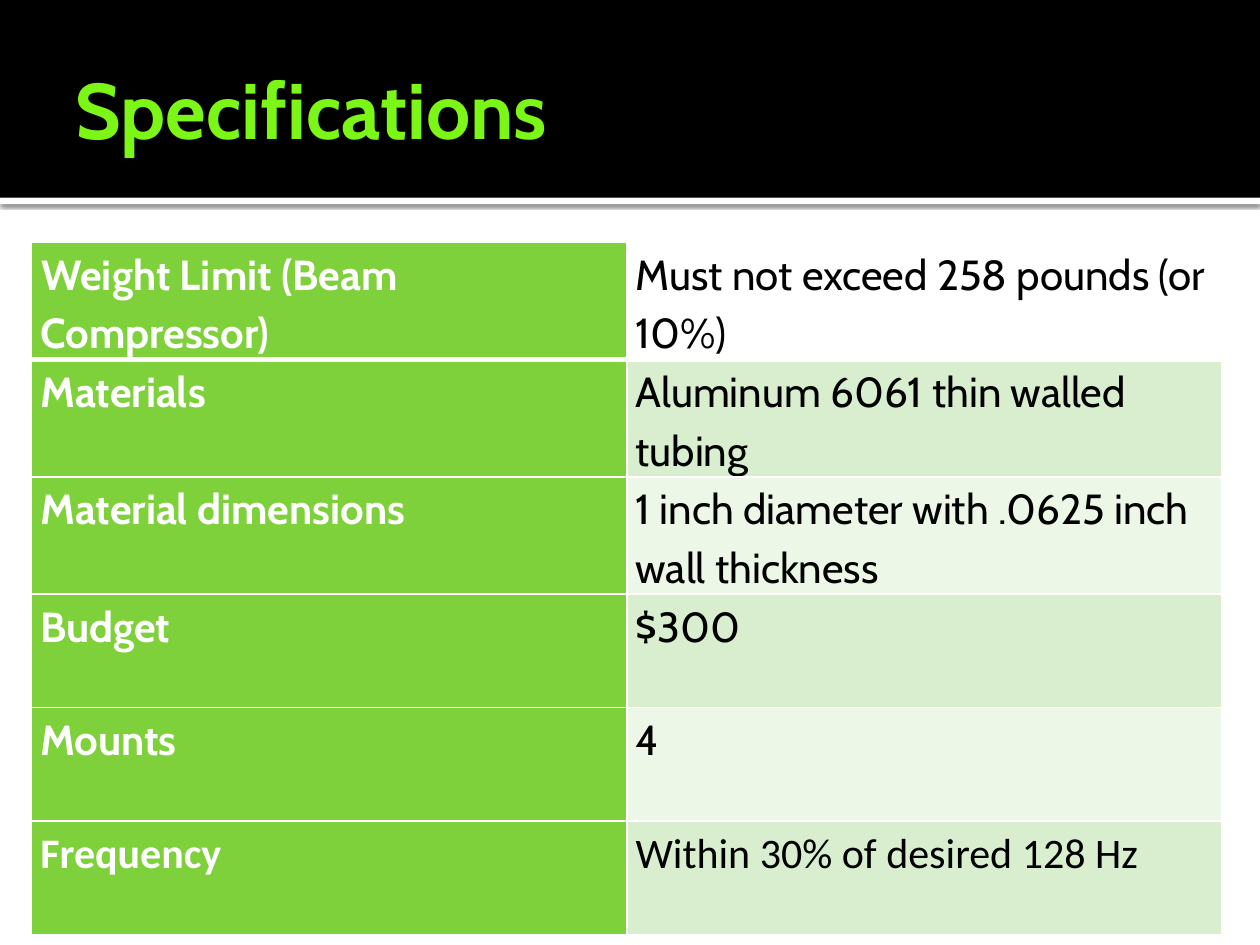
from lxml import etree
from pptx import Presentation
from pptx import util as u
from pptx.dml.color import RGBColor
from pptx.enum import shapes, text
from pptx.oxml import ns

BLACK = RGBColor(0x00, 0x00, 0x00)
WHITE = RGBColor(0xFF, 0xFF, 0xFF)
LIME = RGBColor(0x7B, 0xF6, 0x16)
GREEN = RGBColor(0x7F, 0xD1, 0x3B)
PALE_GREEN = RGBColor(0xD8, 0xEE, 0xCE)
PALEST_GREEN = RGBColor(0xEC, 0xF7, 0xE8)

SPECIFICATIONS = [
    ("Weight Limit (Beam Compressor)", "Must not exceed 258 pounds (or 10%)"),
    ("Materials", "Aluminum 6061 thin walled tubing"),
    ("Material dimensions", "1 inch diameter with .0625 inch wall thickness"),
    ("Budget", "$300"),
    ("Mounts", "4"),
    ("Frequency", "Within 30% of desired 128 Hz"),
]


def add_xml(parent, tag, **attributes):
    return etree.SubElement(parent, ns.qn(tag), attributes)


class SlideBuilder:
    font_name = "Cabin"
    last_row_font = "Calibri"

    def __init__(self, slide):
        self.slide = slide

    def style(self, paragraph, size, color, bold, name=None):
        font = paragraph.font
        font.name = name or self.font_name
        font.size = u.Pt(size)
        font.bold = bold
        font.color.rgb = color

    def title(self, wording, left, top, width, height):
        heading = self.slide.shapes.title
        heading.left, heading.top = u.Inches(left), u.Inches(top)
        heading.width, heading.height = u.Inches(width), u.Inches(height)
        frame = heading.text_frame
        frame.text = wording
        frame.word_wrap = True
        frame.auto_size = text.MSO_AUTO_SIZE.NONE
        frame.vertical_anchor = text.MSO_ANCHOR.MIDDLE
        frame.margin_left = u.Inches(0.1)
        frame.margin_right = frame.margin_top = frame.margin_bottom = u.Inches(0.05)
        frame.paragraphs[0].alignment = text.PP_ALIGN.LEFT
        self.style(frame.paragraphs[0], 45, LIME, True)

    def band(self, top, height, color, shadow=False):
        """Full-width bar placed behind the title."""
        bar = self.slide.shapes.add_shape(
            shapes.MSO_SHAPE.RECTANGLE, 0, u.Inches(top), u.Inches(10), u.Inches(height))
        bar.fill.solid()
        bar.fill.fore_color.rgb = color
        bar.line.fill.background()
        bar.shadow.inherit = False
        if shadow:
            effects = bar.element.spPr.find(ns.qn("a:effectLst"))
            outer = add_xml(effects, "a:outerShdw", blurRad=str(u.Pt(2.5)),
                            dist=str(u.Pt(0.8)), dir="5400000",
                            algn="tl", rotWithShape="0")
            shade = add_xml(outer, "a:srgbClr", val=str(BLACK))
            add_xml(shade, "a:alpha", val="60000")
        self.slide.shapes.title.element.addprevious(bar.element)

    def borders(self, cell, bottom, top):
        properties = cell._tc.get_or_add_tcPr()
        widths = {"L": 1, "R": 1, "T": top, "B": bottom}
        for position, (side, width) in enumerate(widths.items()):
            line = add_xml(properties, f"a:ln{side}", w=str(u.Pt(width)))
            add_xml(add_xml(line, "a:solidFill"), "a:srgbClr", val=str(WHITE))
            properties.insert(position, line)

    def cell(self, cell, wording, fill, color, bold, font_name):
        cell.text = wording
        cell.fill.solid()
        cell.fill.fore_color.rgb = fill
        cell.vertical_anchor = text.MSO_ANCHOR.TOP
        cell.margin_left = cell.margin_right = u.Inches(0.07)
        cell.margin_top = cell.margin_bottom = 0
        paragraph = cell.text_frame.paragraphs[0]
        paragraph.line_spacing = 1.15
        self.style(paragraph, 24, color, bold, font_name)

    def table(self, rows, left, top, width, row_height):
        grid = self.slide.shapes.add_table(
            len(rows), 2, u.Inches(left), u.Inches(top),
            u.Inches(width), u.Inches(row_height * len(rows))).table
        for index, (label, value) in enumerate(rows):
            grid.rows[index].height = u.Inches(row_height)
            if index == 0:
                value_fill = WHITE
            else:
                value_fill = PALE_GREEN if index % 2 else PALEST_GREEN
            name = self.last_row_font if index == len(rows) - 1 else self.font_name
            label_cell, value_cell = grid.cell(index, 0), grid.cell(index, 1)
            self.cell(label_cell, label, GREEN, WHITE, True, name)
            self.cell(value_cell, value, value_fill, BLACK, False, name)
            for cell in (label_cell, value_cell):
                self.borders(cell, bottom=3 if index == 0 else 1,
                             top=3 if index == 1 else 1)
        # The first label is indented slightly
        first = grid.cell(0, 0).text_frame.paragraphs[0]
        first._p.get_or_add_pPr().set("indent", str(u.Inches(0.01)))


def main():
    presentation = Presentation()
    presentation.slide_width, presentation.slide_height = u.Inches(10), u.Inches(7.5)
    builder = SlideBuilder(presentation.slides.add_slide(presentation.slide_layouts[5]))

    # Header
    builder.band(1.57, 0.05, WHITE, shadow=True)
    builder.band(0, 1.57, BLACK)
    builder.title("Specifications", 0.5, 0.17, 9, 1.37)

    # Specification table
    builder.table(SPECIFICATIONS, 0.25, 1.92, 9.45, 0.9)

    presentation.save("out.pptx")


if __name__ == "__main__":
    main()
